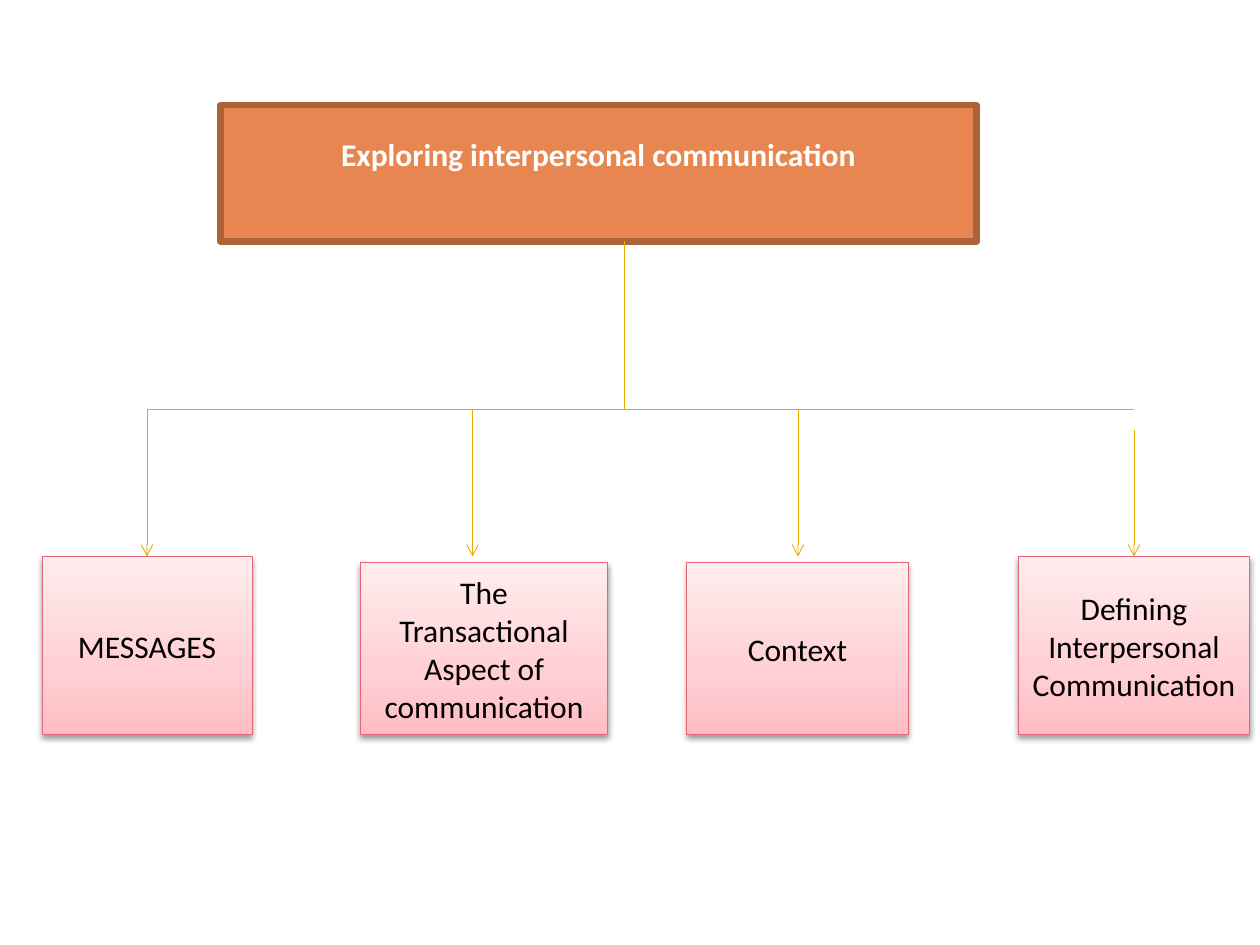
from lxml import etree
from pptx import Presentation
from pptx.dml.color import RGBColor
from pptx.enum.shapes import MSO_CONNECTOR, MSO_SHAPE
from pptx.enum.text import MSO_ANCHOR, MSO_AUTO_SIZE, PP_ALIGN
from pptx.oxml.ns import qn
from pptx.util import Inches, Pt

STRAIGHT = MSO_CONNECTOR.STRAIGHT
RECT = MSO_SHAPE.RECTANGLE
MIDDLE = MSO_ANCHOR.MIDDLE
CENTER = PP_ALIGN.CENTER
NO_FIT = MSO_AUTO_SIZE.NONE

COLORS = {
    "head": "E88651", "frame": "AC633C", "white": "FFFFFF",
    "arrow": "EBA900", "edge": "E46778", "black": "000000",
    "deep": "FFBCC2", "mid": "FFCFD3", "pale": "FFEDEE",
}
FADE = ((0, "deep"), (35, "mid"), (100, "pale"))

# Grid of twelve cells to the inch
RAIL = 39
TIP = 53
FLOOR = 70
# Left, top, width, text
BOXES = (
    (4, TIP, 20, "MESSAGES"),
    (34.3, 53.6, 23.6, "The Transactional Aspect of communication"),
    (65.4, 53.6, 21.1, "Context"),
    (97, TIP, 22, "Defining Interpersonal Communication"),
)
# Column and start row of each arrow
DROPS = ((14, RAIL), (45, RAIL), (76, RAIL), (108, 41))


def cell(count):
    return Inches(count / 12)


def color(name):
    return RGBColor.from_string(COLORS[name])


def add_node(parent, tag, **attrs):
    return etree.SubElement(parent, qn(tag), attrs)


def set_line(line, name, width):
    line.color.rgb = color(name)
    line.width = Pt(width)


def set_text(shape, text, name, bold=False):
    frame = shape.text_frame
    frame.word_wrap = True
    frame.auto_size = NO_FIT
    frame.vertical_anchor = MIDDLE
    para = frame.paragraphs[0]
    para.alignment = CENTER
    run = para.add_run()
    run.text = text
    run.font.name = "Calibri"
    run.font.size = Pt(18)
    run.font.bold = bold
    run.font.color.rgb = color(name)


def set_fade(shape):
    """Fill with the three-stop gradient, darkest at the bottom."""
    shape.fill.gradient()
    shape.fill.gradient_angle = 90
    stops = next(shape.element.iter(qn("a:gsLst")))
    stops.clear()
    for share, name in FADE:
        stop = add_node(stops, "a:gs", pos=str(share * 1000))
        add_node(stop, "a:srgbClr", val=COLORS[name])


def set_shadow(shape):
    shape.shadow.inherit = False
    effects = shape.element.spPr.find(qn("a:effectLst"))
    shadow = add_node(effects, "a:outerShdw", blurRad=str(Pt(3.5)),
                      dist=str(Pt(2)), dir="5400000", rotWithShape="0")
    tint = add_node(shadow, "a:srgbClr", val=COLORS["black"])
    add_node(tint, "a:alpha", val="38000")


def set_title(slide, text):
    title = slide.shapes.title
    title.left, title.top = cell(21), cell(10)
    title.width, title.height = cell(72), cell(13)
    title.fill.solid()
    title.fill.fore_color.rgb = color("head")
    set_line(title.line, "frame", 3.78)
    add_node(title.element.spPr.find(qn("a:ln")), "a:round")
    set_text(title, text, "white", bold=True)
    title.text_frame.margin_bottom = Inches(0.35)


def add_line(slide, start, end, arrow=False):
    link = slide.shapes.add_connector(STRAIGHT, *map(cell, start + end))
    set_line(link.line, "arrow", 0.5)
    props = link.element.spPr
    if arrow:
        add_node(props.find(qn("a:ln")), "a:tailEnd", type="arrow")
    add_node(props, "a:effectLst")


def add_box(slide, left, top, width, text):
    box = slide.shapes.add_shape(
        RECT, cell(left), cell(top), cell(width), cell(FLOOR - top))
    set_fade(box)
    set_line(box.line, "edge", 0.5)
    set_shadow(box)
    set_text(box, text, "black")


def main():
    deck = Presentation()
    deck.slide_width, deck.slide_height = Inches(10), Inches(7.5)
    slide = deck.slides.add_slide(deck.slide_layouts[5])
    set_title(slide, "Exploring interpersonal communication")
    add_line(slide, (DROPS[0][0], RAIL), (DROPS[-1][0], RAIL))
    add_line(slide, (59.5, 23), (59.5, RAIL))
    for col, row in DROPS:
        add_line(slide, (col, row), (col, TIP), arrow=True)
    for box in BOXES:
        add_box(slide, *box)
    deck.save("out.pptx")


if __name__ == "__main__":
    main()
